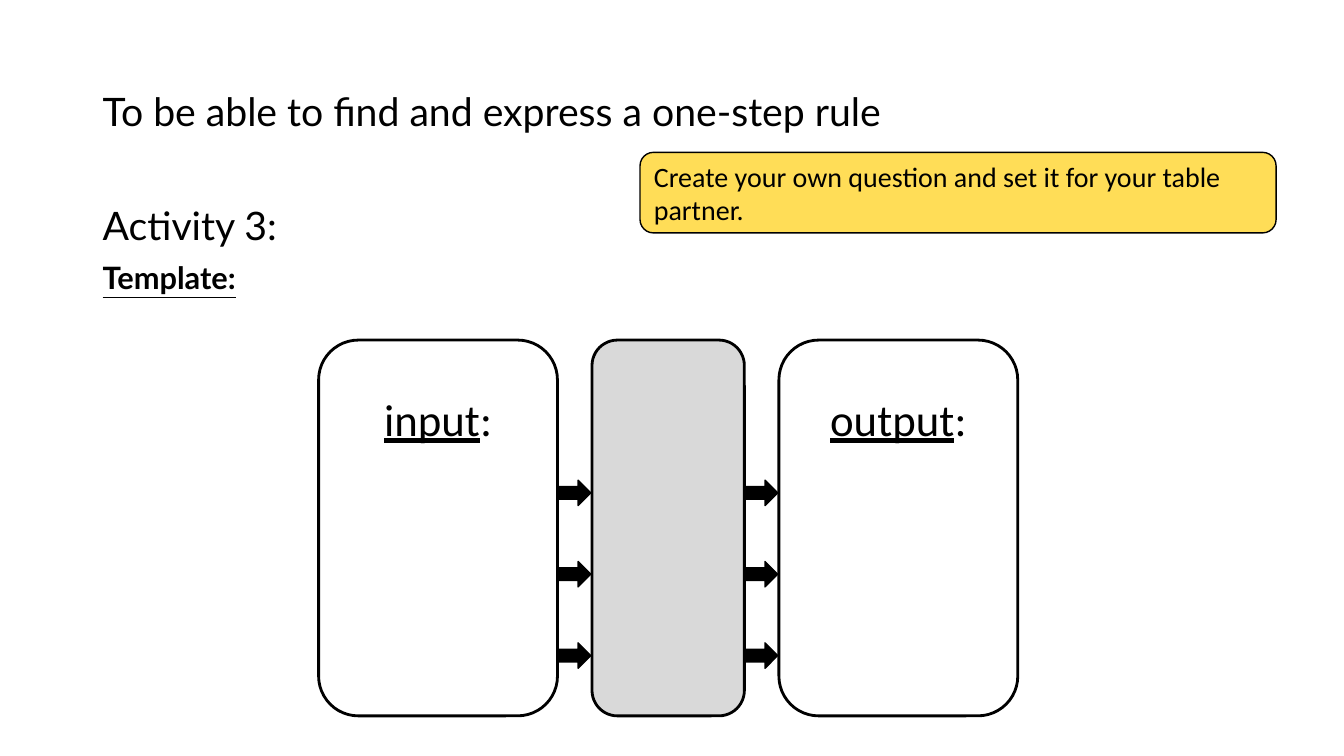
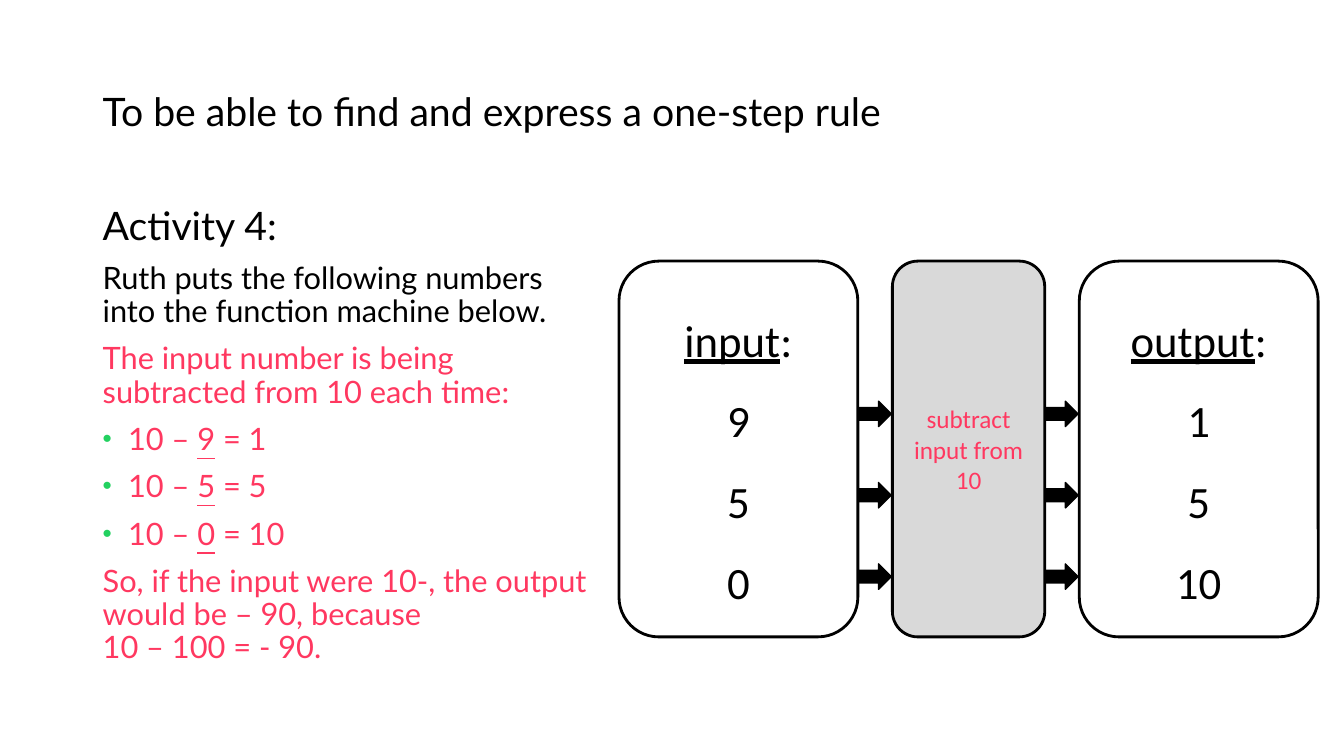
from lxml import etree
from pptx import Presentation
from pptx.dml.color import RGBColor
from pptx.enum.shapes import MSO_SHAPE
from pptx.enum.text import MSO_ANCHOR, PP_ALIGN
from pptx.oxml.ns import qn
from pptx.util import Cm, Pt

ROUNDED, ARROW = MSO_SHAPE.ROUNDED_RECTANGLE, MSO_SHAPE.RIGHT_ARROW
TOP, MIDDLE = MSO_ANCHOR.TOP, MSO_ANCHOR.MIDDLE
LEFT, CENTER = PP_ALIGN.LEFT, PP_ALIGN.CENTER

COLORS = {
    "ink": "000000",
    "paper": "FFFFFF",
    "machine": "D9D9D9",
    "task": "FFDD57",
    "answer": "FF3860",
    "bullet": "23D160",
}
LESSON_FONT, DIAGRAM_FONT = "Lato", "Calibri"
LESSON_GOAL = "To be able to find and express a one-step rule"


def rgb(name):
    return RGBColor.from_string(COLORS[name])


class Lesson:
    """Holds the shared style and the slide being built."""

    margin = 2.34
    column_width, column_height = 6.02, 9.47
    function_width, gap = 3.84, 0.87
    arrow_width, arrow_height = 0.84, 0.64
    first_arrow, arrow_pitch = 3.53, 2.05

    def __init__(self):
        self.deck = Presentation()
        self.deck.slide_width, self.deck.slide_height = Cm(33.87), Cm(19.05)
        self.slide = None

    def new_slide(self, activity):
        self.slide = self.deck.slides.add_slide(self.deck.slide_layouts[6])
        goal = self.text_box(1.02, 24.38, 3.68, MIDDLE)
        self.paragraph(goal, [LESSON_GOAL], 28, spacing=0.9)
        return self.body(activity)

    def body(self, activity):
        frame = self.text_box(5.08, 12.78, 12.09, TOP)
        self.paragraph(frame, [activity], 28, spacing=0.9)
        return frame

    def text_box(self, top, width, height, anchor):
        box = self.slide.shapes.add_textbox(
            Cm(self.margin), Cm(top), Cm(width), Cm(height))
        frame = box.text_frame
        frame.word_wrap = True
        frame.vertical_anchor = anchor
        return frame

    def paragraph(self, frame, runs, size, font=LESSON_FONT, color="ink",
                  align=LEFT, spacing=1.0, bold=False, bulleted=False):
        """Add a paragraph; a run is text, (text,) underlined, or None for a break."""
        first = not frame.paragraphs[0].runs
        para = frame.paragraphs[0] if first else frame.add_paragraph()
        if bulleted:
            self.bullet(para)
        para.alignment = align
        para.line_spacing = spacing
        if not first and font == LESSON_FONT:
            para.space_before = Pt(10)
        for piece in runs:
            if piece is None:
                para.add_line_break()
                continue
            underlined = isinstance(piece, tuple)
            run = para.add_run()
            run.text = piece[0] if underlined else piece
            run.font.name, run.font.size = font, Pt(size)
            run.font.bold, run.font.underline = bold, underlined
            run.font.color.rgb = rgb(color)

    def bullet(self, para):
        props = para._p.get_or_add_pPr()
        props.set("marL", str(Cm(0.64)))
        props.set("indent", str(-Cm(0.64)))
        tint = etree.SubElement(props, qn("a:buClr"))
        etree.SubElement(tint, qn("a:srgbClr"), val=COLORS["bullet"])
        etree.SubElement(props, qn("a:buSzPct"), val="85000")
        etree.SubElement(props, qn("a:buFont"), typeface="Arial")
        etree.SubElement(props, qn("a:buChar"), char="•")

    def panel(self, kind, left, top, width, height, fill, line=2):
        shape = self.slide.shapes.add_shape(
            kind, Cm(left), Cm(top), Cm(width), Cm(height))
        shape.shadow.inherit = False
        shape.fill.solid()
        shape.fill.fore_color.rgb = rgb(fill)
        shape.line.color.rgb = rgb("ink")
        shape.line.width = Pt(line)
        frame = shape.text_frame
        frame.word_wrap = True
        frame.vertical_anchor = MIDDLE
        return frame

    def number_column(self, left, top, heading, numbers):
        frame = self.panel(ROUNDED, left, top, self.column_width,
                           self.column_height, "paper")
        frame.vertical_anchor = TOP
        frame.margin_top = Cm(0.32)
        for runs in [[(heading,), ":"]] + [[number] for number in numbers]:
            self.paragraph(frame, runs, 32, DIAGRAM_FONT, align=CENTER, spacing=1.5)

    def function_machine(self, left, top, inputs=(), rule="", outputs=()):
        input_end = left + self.column_width
        function_left = input_end + self.gap
        function_end = function_left + self.function_width
        self.number_column(left, top, "input", inputs)
        self.number_column(function_end + self.gap, top, "output", outputs)
        function = self.panel(ROUNDED, function_left, top, self.function_width,
                              self.column_height, "machine")
        if rule:
            self.paragraph(function, [rule], 18, DIAGRAM_FONT, "answer", CENTER)
        for row in range(3):
            arrow_top = top + self.first_arrow + row * self.arrow_pitch
            for arrow_left in (input_end, function_end):
                self.panel(ARROW, arrow_left, arrow_top, self.arrow_width,
                           self.arrow_height, "ink", 1)

    def task(self, text):
        frame = self.panel(ROUNDED, 16.13, 3.84, 16.03, 2.03, "task", 1)
        self.paragraph(frame, [text], 20, DIAGRAM_FONT)


def main():
    lesson = Lesson()

    # Activity 3: empty template
    body = lesson.new_slide("Activity 3:")
    lesson.paragraph(body, [("Template:",)], 22, spacing=0.9, bold=True)
    lesson.function_machine(8.03, 8.57)
    lesson.task("Create your own question and set it for your table partner.")

    # Activity 4: worked answer
    body = lesson.new_slide("Activity 4:")
    lesson.paragraph(
        body, ["Ruth puts the following numbers into the function machine below."],
        22, spacing=0.9)
    inputs, outputs = ("9", "5", "0"), ("1", "5", "10")
    answer = {"size": 22, "color": "answer", "spacing": 0.9}
    lesson.paragraph(
        body, ["The input number is being subtracted from 10 each time:"], **answer)
    for given, result in zip(inputs, outputs):
        lesson.paragraph(body, ["10 – ", (given,), f" = {result}"],
                         bulleted=True, **answer)
    lesson.paragraph(
        body, ["So, if the input were 10-, the output would be – 90, because",
               None, "10 – 100 = - 90."], **answer)
    lesson.function_machine(15.6, 6.58, inputs, "subtract input from 10", outputs)

    lesson.deck.save("out.pptx")


if __name__ == "__main__":
    main()
